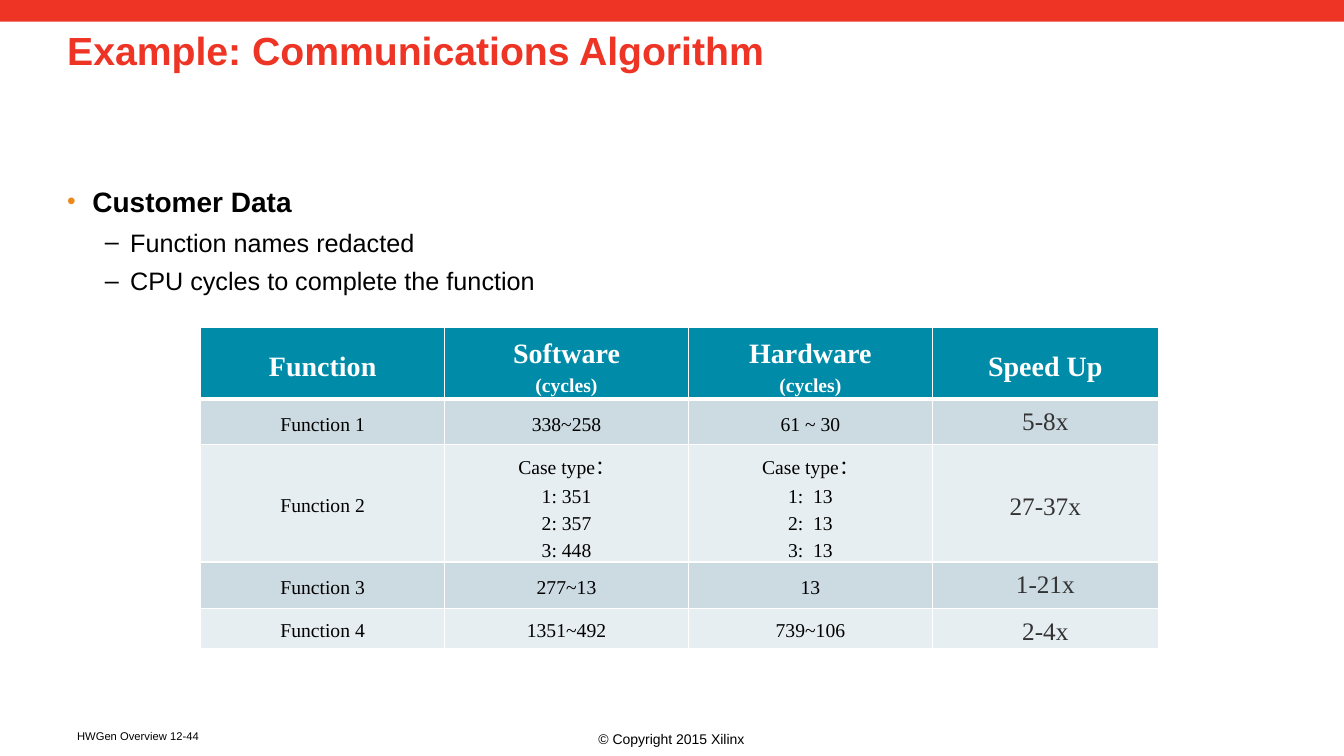
import pptx
import pptx.dml.color
import pptx.enum.text
import pptx.oxml
import pptx.oxml.ns
import pptx.util

Pt = pptx.util.Pt
RGBColor = pptx.dml.color.RGBColor
Align = pptx.enum.text.PP_ALIGN
Anchor = pptx.enum.text.MSO_ANCHOR

RED = RGBColor(0xEE, 0x34, 0x24)
TEAL = RGBColor(0x00, 0x8C, 0xA8)
BAND_DARK = RGBColor(0xCC, 0xDA, 0xE1)
BAND_LIGHT = RGBColor(0xE7, 0xEE, 0xF1)
ORANGE = RGBColor(0xEC, 0x89, 0x1D)
GRAY = RGBColor(0x33, 0x33, 0x33)
BLACK = RGBColor(0, 0, 0)
WHITE = RGBColor(0xFF, 0xFF, 0xFF)

SANS = "Arial"
SERIF = "Times New Roman"


class Deck:
    """Holds the style and the current slide."""

    def __init__(self):
        self.presentation = pptx.Presentation()
        self.presentation.slide_width = Pt(960)
        self.presentation.slide_height = Pt(540)
        self.slide = self.presentation.slides.add_slide(
            self.presentation.slide_layouts[5])

    def style(self, paragraph, size, color=BLACK, bold=False, face=SANS,
              align=Align.LEFT, spacing=1.0):
        paragraph.alignment = align
        paragraph.line_spacing = spacing
        font = paragraph.font
        font.name, font.size, font.bold = face, Pt(size), bold
        font.color.rgb = color

    def bar(self, left, top, width, height, color):
        bar = self.slide.shapes.add_shape(
            pptx.enum.shapes.MSO_SHAPE.RECTANGLE,
            Pt(left), Pt(top), Pt(width), Pt(height))
        bar.shadow.inherit = False
        bar.fill.solid()
        bar.fill.fore_color.rgb = color
        bar.line.fill.background()

    def title(self, text, left, top, width, height):
        title = self.slide.shapes.title
        title.left, title.top = Pt(left), Pt(top)
        title.width, title.height = Pt(width), Pt(height)
        frame = title.text_frame
        frame.text = text
        frame.word_wrap = True
        frame.auto_size = pptx.enum.text.MSO_AUTO_SIZE.NONE
        frame.vertical_anchor = Anchor.TOP
        frame.margin_left = 0
        self.style(frame.paragraphs[0], 28, RED, True, spacing=0.98)

    def text_frame(self, left, top, width, height):
        frame = self.slide.shapes.add_textbox(
            Pt(left), Pt(top), Pt(width), Pt(height)).text_frame
        frame.word_wrap = True
        return frame

    def label(self, text, left, top, width, height, size,
              align=Align.LEFT, anchor=Anchor.TOP):
        frame = self.text_frame(left, top, width, height)
        frame.text = text
        frame.vertical_anchor = anchor
        self.style(frame.paragraphs[0], size, align=align)

    def bullet(self, paragraph, mark, color, percent, indent):
        properties = paragraph._p.get_or_add_pPr()
        properties.set("marL", str(Pt(indent)))
        properties.set("indent", str(Pt(-18)))
        namespace = pptx.oxml.ns.nsdecls("a")
        for xml in (
                f'<a:buClr {namespace}><a:srgbClr val="{color}"/></a:buClr>',
                f'<a:buSzPct {namespace} val="{percent * 1000}"/>',
                f'<a:buFont {namespace} typeface="{SANS}"/>',
                f'<a:buChar {namespace} char="{mark}"/>'):
            properties.append(pptx.oxml.parse_xml(xml))

    def bullets(self, heading, points, left, top, width, height):
        frame = self.text_frame(left, top, width, height)
        frame.margin_left = 0
        frame.text = "\n".join([heading] + points)
        first, *rest = frame.paragraphs
        self.bullet(first, "•", ORANGE, 88, 18)
        self.style(first, 20, bold=True, spacing=1.1)
        for point in rest:
            point.level = 1
            self.bullet(point, "–", BLACK, 100, 45)
            self.style(point, 18, spacing=1.1)
            point.space_before = Pt(4)

    def borders(self, cell, top, bottom):
        namespace = pptx.oxml.ns.nsdecls("a")
        for side, width in (("L", 1), ("R", 1), ("T", top), ("B", bottom)):
            cell._tc.get_or_add_tcPr().append(pptx.oxml.parse_xml(
                f'<a:ln{side} {namespace} w="{Pt(width)}"><a:solidFill>'
                f'<a:srgbClr val="{WHITE}"/></a:solidFill></a:ln{side}>'))

    def cell(self, cell, text, row, column):
        header = row == 0
        self.borders(cell, 3 if row == 1 else 1, 3 if header else 1)
        cell.fill.solid()
        cell.fill.fore_color.rgb = (
            TEAL if header else BAND_DARK if row % 2 else BAND_LIGHT)
        cell.vertical_anchor = Anchor.MIDDLE
        cell.margin_left = cell.margin_right = Pt(5)
        cell.margin_top = cell.margin_bottom = 0
        cell.text = text
        speed_up = column == 3 and not header
        for index, line in enumerate(cell.text_frame.paragraphs):
            if header:
                size, color = (14 if index else 20), WHITE
            else:
                size, color = (18, GRAY) if speed_up else (14, BLACK)
            spacing = 1.0 if speed_up and row % 2 else 1.25
            self.style(line, size, color, header, SERIF, Align.CENTER, spacing)

    def table(self, rows, left, top, widths, heights):
        table = self.slide.shapes.add_table(
            len(rows), len(widths), Pt(left), Pt(top),
            Pt(sum(widths)), Pt(sum(heights))).table
        table.horz_banding = False
        for column, width in zip(table.columns, widths):
            column.width = Pt(width)
        for row, height in zip(table.rows, heights):
            row.height = Pt(height)
        for r, texts in enumerate(rows):
            for c, text in enumerate(texts):
                self.cell(table.cell(r, c), text, r, c)


CYCLES = [
    ["Function", "Software\n(cycles)", "Hardware\n(cycles)", "Speed Up"],
    ["Function 1", "338~258", "61 ~ 30", "5-8x"],
    ["Function 2", "Case type：\n1: 351\n2: 357\n3: 448",
     "Case type：\n1:  13\n2:  13\n3:  13", "27-37x"],
    ["Function 3", "277~13", "13", "1-21x"],
    ["Function 4", "1351~492", "739~106", "2-4x"],
]


def main():
    deck = Deck()

    # Heading
    deck.bar(0, 0, 960, 15.6, RED)
    deck.title("Example: Communications Algorithm", 48, 16.5, 864, 90)

    # Key points
    deck.bullets("Customer Data",
                 ["Function names redacted",
                  "CPU cycles to complete the function"],
                 48, 126, 864, 337)

    # Cycle counts
    deck.table(CYCLES, 143.4, 234, [174.2, 174.2, 174.2, 161.4],
               [46, 32.4, 83.5, 33, 28.8])

    # Footer
    deck.label("© Copyright 2015 Xilinx", 327.6, 518.4, 304, 19.4, 10,
               Align.CENTER, Anchor.MIDDLE)
    deck.label("HWGen Overview 12-44", 48, 517.7, 119, 22.3, 8)

    deck.presentation.save("out.pptx")


if __name__ == "__main__":
    main()
